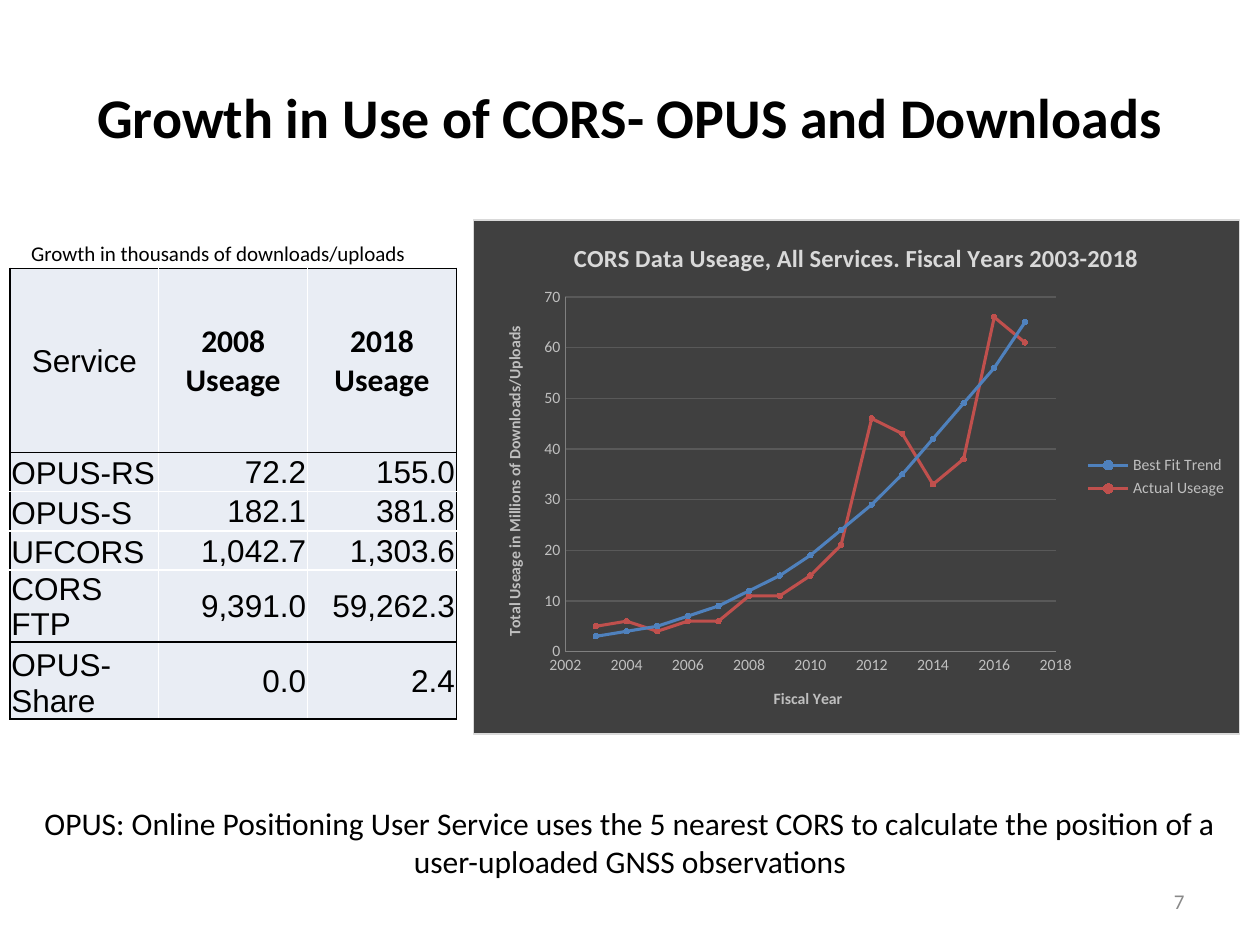
"""Builds the slide on growth in use of CORS: a service table and a usage chart."""
from lxml import etree
from pptx import Presentation
from pptx import util as u
from pptx.chart.data import XyChartData
from pptx.dml.color import RGBColor
from pptx.enum import chart as ch, text
from pptx.oxml import parse_xml
from pptx.oxml.ns import nsdecls, qn

A, P = text.MSO_ANCHOR, text.PP_ALIGN


def rgb(hex_):
    return RGBColor.from_string(hex_)


def style(font, color="000000", **fmt):
    for k, v in fmt.items():
        setattr(font, k, v)
    font.color.rgb = rgb(color)


prs = Presentation()
prs.slide_width, prs.slide_height = u.Cm(25.4), u.Cm(19.05)
s = prs.slides.add_slide(prs.slide_layouts[5])

title = s.shapes.title
pos = dict(left=u.Cm(1.27), top=u.Cm(0.76), width=u.Cm(22.86), height=u.Cm(3.18))
for k, v in pos.items():
    setattr(title, k, v)
tf = title.text_frame
tf.text = "Growth in Use of CORS- OPUS and Downloads"
tf.vertical_anchor = A.MIDDLE
tf.paragraphs[0].alignment = P.CENTER
style(tf.paragraphs[0].runs[0].font, name="Calibri", size=u.Pt(32), bold=True)

rows = [
    ("Service", "2008 Useage", "2018 Useage"),
    ("OPUS-RS", "72.2", "155.0"),
    ("OPUS-S", "182.1", "381.8"),
    ("UFCORS", "1,042.7", "1,303.6"),
    ("CORS FTP", "9,391.0", "59,262.3"),
    ("OPUS-Share", "0.0", "2.4"),
]
heights = [3.71, 0.79, 0.79, 0.79, 0.79, 1.55]
table = s.shapes.add_table(6, 3, u.Cm(0.2), u.Cm(5.41), u.Cm(9), u.Cm(sum(heights))).table
table.first_row = table.horz_banding = False
for col in table.columns:
    col.width = u.Cm(3)
for i, row in enumerate(rows):
    table.rows[i].height = u.Cm(heights[i])
    for j, value in enumerate(row):
        cell = table.cell(i, j)
        cell.text = value
        fmt = dict(margin_left=u.Cm(0.03), margin_right=u.Cm(0.03),
                   margin_top=u.Cm(0.03), margin_bottom=0,
                   vertical_anchor=A.BOTTOM if i and not j else A.MIDDLE)
        for k, v in fmt.items():
            setattr(cell, k, v)
        p = cell.text_frame.paragraphs[0]
        p.alignment = P.CENTER if i == 0 else P.RIGHT if j else P.LEFT
        head = i == 0 and j > 0
        style(p.runs[0].font, name="Calibri" if head else "Arial", size=u.Pt(18), bold=head)
        black = {"L": j == 0, "R": j == 2, "T": i in (0, 1, 5), "B": i in (0, 4, 5)}
        for side, dark in black.items():
            cell._tc.get_or_add_tcPr().append(parse_xml(
                f'<a:ln{side} {nsdecls("a")} w="12700"><a:solidFill><a:srgbClr '
                f'val="{"000000" if dark else "FFFFFF"}"/></a:solidFill></a:ln{side}>'))
        cell.fill.solid()
        cell.fill.fore_color.rgb = rgb("E9EDF4")

series = {
    "Best Fit Trend": ([3, 4, 5, 7, 9, 12, 15, 19, 24, 29, 35, 42, 49, 56, 65], "4F81BD", "95B3D7"),
    "Actual Useage": ([5, 6, 4, 6, 6, 11, 11, 15, 21, 46, 43, 33, 38, 66, 61], "C0504D", "D99694"),
}
data = XyChartData()
for name, (values, *_) in series.items():
    ser = data.add_series(name)
    for year, value in enumerate(values, 2003):
        ser.add_data_point(year, value)
chart = s.shapes.add_chart(ch.XL_CHART_TYPE.XY_SCATTER_LINES, u.Cm(9.53), u.Cm(4.42),
                           u.Cm(15.47), u.Cm(10.39), data).chart
style(chart.font, "BFBFBF", name="Calibri", size=u.Pt(9))
chart.plots[0].vary_by_categories = False
for ser, (_, color, fill) in zip(chart.plots[0].series, series.values()):
    ser.smooth = False
    ser.format.line.width = u.Pt(1.75)
    ser.format.line.color.rgb = rgb(color)
    ser.marker.style, ser.marker.size = ch.XL_MARKER_STYLE.CIRCLE, 3
    ser.marker.format.fill.solid()
    ser.marker.format.fill.fore_color.rgb = rgb(fill)
    ser.marker.format.line.color.rgb = rgb(color)

x, y = chart.category_axis, chart.value_axis
titles = [
    (chart, chart, "CORS Data Useage, All Services. Fiscal Years 2003-2018", 14, "D9D9D9"),
    (x, x, "Fiscal Year", 9, "BFBFBF"),
    (y, y, "Total Useage in Millions of Downloads/Uploads", 9, "BFBFBF"),
]
for owner, _, words, size, color in titles:
    owner.has_title = True
    tf = owner.chart_title.text_frame if owner is chart else owner.axis_title.text_frame
    tf.text = words
    style(tf.paragraphs[0].runs[0].font, color, name="Calibri", size=u.Pt(size), bold=True)
for axis, low, high, step in ((x, 2002, 2018, 2), (y, 0, 70, 10)):
    fmt = dict(minimum_scale=low, maximum_scale=high, major_unit=step,
               major_tick_mark=ch.XL_TICK_MARK.NONE, minor_tick_mark=ch.XL_TICK_MARK.NONE,
               has_major_gridlines=axis is y)
    for k, v in fmt.items():
        setattr(axis, k, v)
    axis.tick_labels.number_format = "General"
    axis.tick_labels.number_format_is_linked = False
    style(axis.tick_labels.font, "BFBFBF", name="Calibri", size=u.Pt(9))
    axis.format.line.color.rgb = rgb("808080")
    axis.format.line.width = u.Pt(0.75)
grid = y.major_gridlines.format.line
grid.color.rgb, grid.width = rgb("595959"), u.Pt(0.75)
chart.has_legend = True
chart.legend.position = ch.XL_LEGEND_POSITION.RIGHT
chart.legend.include_in_layout = False
style(chart.legend.font, "BFBFBF", name="Calibri", size=u.Pt(9))

plot = chart._chartSpace.chart.plotArea
for old in plot.findall(qn("c:layout")):
    plot.remove(old)
layout = parse_xml(f'<c:layout {nsdecls("c")}><c:manualLayout/></c:layout>')
for tag, val in (("layoutTarget", "inner"), ("xMode", "edge"), ("yMode", "edge"),
                 ("x", "0.12"), ("y", "0.15"), ("w", "0.64"), ("h", "0.69")):
    etree.SubElement(layout[0], qn(f"c:{tag}")).set("val", val)
plot.insert(0, layout)
chart._chartSpace.chart.addnext(parse_xml(
    f'<c:spPr {nsdecls("c", "a")}><a:solidFill><a:srgbClr val="404040"/></a:solidFill>'
    '<a:ln w="9525"><a:solidFill><a:srgbClr val="D9D9D9"/></a:solidFill></a:ln></c:spPr>'))

notes = [
    ("7", 18.21, 17.65, 5.92, 1.02, 12, P.RIGHT, "898989", A.MIDDLE, True),
    ("Growth in thousands of downloads/uploads", 0.38, 4.72, 8.13, 0.76, 12, P.LEFT,
     "000000", A.TOP, False),
    ("OPUS: Online Positioning User Service uses the 5 nearest CORS to calculate the position "
     "of a user-uploaded GNSS observations", 0.1, 16.08, 25.2, 1.8, 18, P.CENTER,
     "000000", A.TOP, True),
]
for words, left, top, width, height, size, align, color, anchor, wrap in notes:
    tf = s.shapes.add_textbox(*map(u.Cm, (left, top, width, height))).text_frame
    tf.word_wrap, tf.vertical_anchor = wrap, anchor
    p = tf.paragraphs[0]
    p.alignment = align
    r = p.add_run()
    r.text = words
    style(r.font, color, name="Calibri", size=u.Pt(size))

prs.save("out.pptx")
